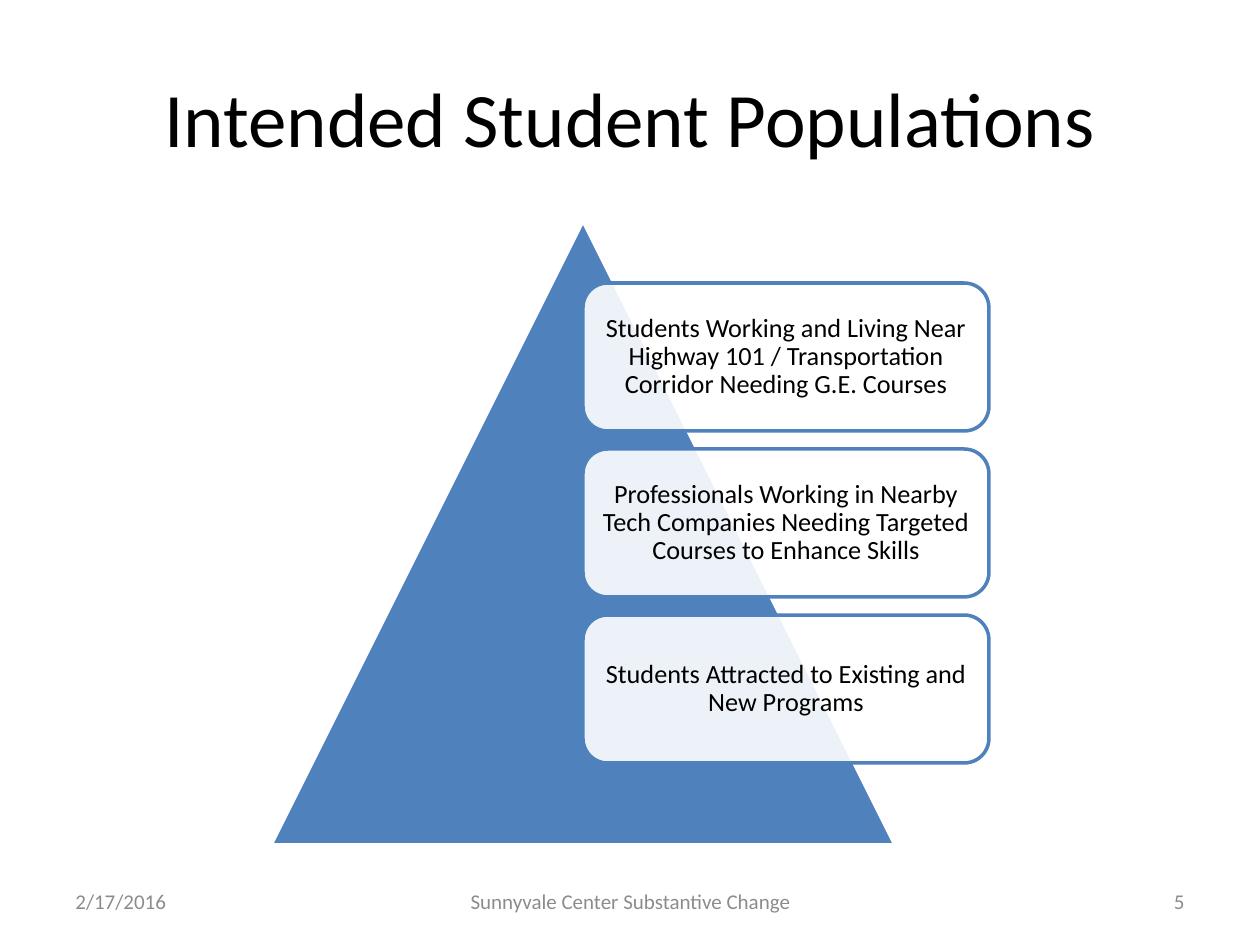
"""Build the slide on intended student populations."""
from dataclasses import dataclass

from lxml import etree
from pptx import Presentation
from pptx.dml.color import RGBColor
from pptx.enum.shapes import MSO_SHAPE
from pptx.enum.text import MSO_ANCHOR, PP_ALIGN
from pptx.oxml.ns import qn
from pptx.shapes.autoshape import Shape
from pptx.slide import Slide
from pptx.text.text import TextFrame
from pptx.util import Pt

TRIANGLE = MSO_SHAPE.ISOSCELES_TRIANGLE
ROUNDED = MSO_SHAPE.ROUNDED_RECTANGLE
MIDDLE = MSO_ANCHOR.MIDDLE
LEFT, CENTER, RIGHT = PP_ALIGN.LEFT, PP_ALIGN.CENTER, PP_ALIGN.RIGHT
EMU_PER_INCH, PX_PER_INCH = 914400, 126
TITLE_ONLY = 5


@dataclass(frozen=True)
class Theme:
    """Colours, font and point sizes of the slide."""

    font: str = "Calibri"
    ink: str = "000000"
    muted: str = "8C8C8C"
    accent: str = "4F81BD"
    paper: str = "FFFFFF"
    title_size: int = 44
    card_size: int = 15
    footer_size: int = 12
    outline: int = 2
    card_opacity: int = 90


@dataclass(frozen=True)
class Box:
    """Position and size in px."""

    left: int
    top: int
    width: int
    height: int

    def emu(self) -> tuple[int, int, int, int]:
        """Return left, top, width and height in EMU."""
        return emu(self.left), emu(self.top), emu(self.width), emu(self.height)


@dataclass(frozen=True)
class FooterItem:
    """One footer text with its place and alignment."""

    text: str
    box: Box
    align: PP_ALIGN


THEME = Theme()
TITLE_BOX = Box(63, 38, 1134, 157)
PYRAMID_BOX = Box(271, 221, 624, 624)
FIRST_CARD = Box(583, 283, 406, 148)
CARD_PITCH = 166
CARD_INSET = 8
POPULATIONS = (
    "Students Working and Living Near Highway 101 / Transportation Corridor Needing G.E. Courses",
    "Professionals Working in Nearby Tech Companies Needing Targeted Courses to Enhance Skills",
    "Students Attracted to Existing and New Programs",
)
FOOTER = (
    FooterItem("2/17/2016", Box(63, 876, 294, 50), LEFT),
    FooterItem("Sunnyvale Center Substantive Change", Box(431, 876, 399, 50), CENTER),
    FooterItem("5", Box(903, 876, 294, 50), RIGHT),
)


def emu(px: int) -> int:
    """Convert px to EMU."""
    return round(px * EMU_PER_INCH / PX_PER_INCH)


def write(frame: TextFrame, text: str, size: int, color: str, align: PP_ALIGN) -> None:
    """Put one formatted, vertically centred paragraph in a text frame."""
    frame.text = text
    frame.word_wrap = True
    frame.vertical_anchor = MIDDLE
    paragraph = frame.paragraphs[0]
    paragraph.alignment = align
    font = paragraph.runs[0].font
    font.name = THEME.font
    font.size = Pt(size)
    font.color.rgb = RGBColor.from_string(color)


def add_panel(slide: Slide, preset: MSO_SHAPE, box: Box, fill: str, line: str) -> Shape:
    """Add a filled and outlined preset shape without a shadow."""
    panel = slide.shapes.add_shape(preset, *box.emu())
    panel.shadow.inherit = False
    panel.fill.solid()
    panel.fill.fore_color.rgb = RGBColor.from_string(fill)
    panel.line.color.rgb = RGBColor.from_string(line)
    panel.line.width = Pt(THEME.outline)
    return panel


def add_card(slide: Slide, text: str, box: Box) -> None:
    """Add a translucent rounded card holding one student population."""
    card = add_panel(slide, ROUNDED, box, THEME.paper, THEME.accent)
    fill_color = card.fill._xPr.find(qn("a:solidFill"))[0]
    etree.SubElement(fill_color, qn("a:alpha"), val=str(THEME.card_opacity * 1000))
    frame = card.text_frame
    frame.margin_left = frame.margin_right = emu(CARD_INSET)
    frame.margin_top = frame.margin_bottom = emu(CARD_INSET)
    write(frame, text, THEME.card_size, THEME.ink, CENTER)
    frame.paragraphs[0].line_spacing = 0.9


def add_footer(slide: Slide, item: FooterItem) -> None:
    """Add one footer text."""
    footer = slide.shapes.add_textbox(*item.box.emu())
    write(footer.text_frame, item.text, THEME.footer_size, THEME.muted, item.align)


def main() -> None:
    """Build and save the presentation."""
    presentation = Presentation()
    presentation.slide_width, presentation.slide_height = emu(1260), emu(945)
    slide = presentation.slides.add_slide(presentation.slide_layouts[TITLE_ONLY])

    title = slide.shapes.title
    title.left, title.top, title.width, title.height = TITLE_BOX.emu()
    write(title.text_frame, "Intended Student Populations", THEME.title_size, THEME.ink, CENTER)

    add_panel(slide, TRIANGLE, PYRAMID_BOX, THEME.accent, THEME.paper)
    for row, population in enumerate(POPULATIONS):
        top = FIRST_CARD.top + row * CARD_PITCH
        add_card(slide, population, Box(FIRST_CARD.left, top, FIRST_CARD.width, FIRST_CARD.height))
    for item in FOOTER:
        add_footer(slide, item)

    presentation.save("out.pptx")


if __name__ == "__main__":
    main()
